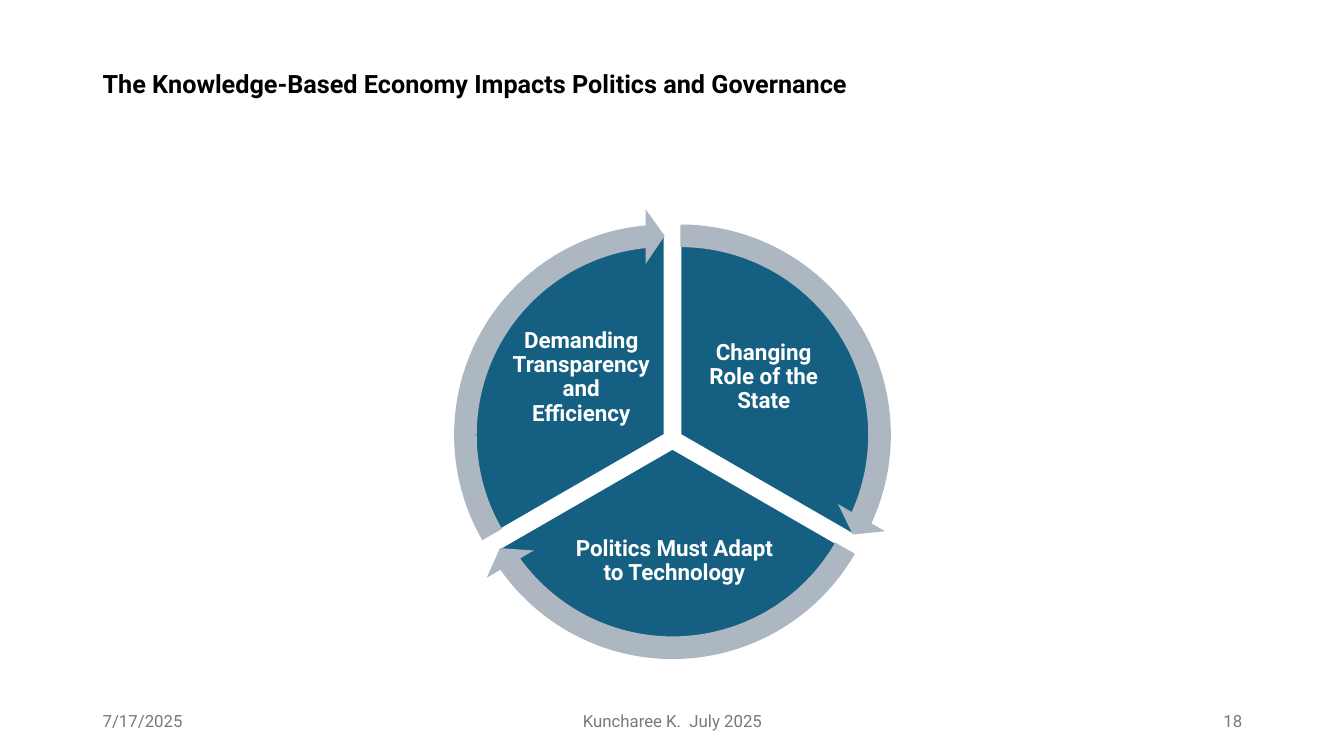
from math import cos, radians, sin

from pptx import Presentation
from pptx.dml.color import RGBColor
from pptx.enum.shapes import MSO_SHAPE
from pptx.enum.text import MSO_ANCHOR, PP_ALIGN
from pptx.util import Inches, Pt

FONT = "Roboto"
BLACK = RGBColor(0x00, 0x00, 0x00)
WHITE = RGBColor(0xFF, 0xFF, 0xFF)
BLUE = RGBColor(0x15, 0x60, 0x82)
ARROW_GREY = RGBColor(0xAC, 0xB7, 0xC1)
FOOTER_GREY = RGBColor(0x79, 0x79, 0x79)

# The wheel: three sectors pushed outwards from one centre
CENTER_X, CENTER_Y = 6.67, 4.36
PUSH = 0.09
SECTOR_SIZE, ARROW_SIZE = 4, 4.49
SWEEP = 120
HEAD_ANGLE = 5.46
ANGLE_UNIT = 0.6  # adjustment value of one degree

# Start angle, label, label frame
SECTORS = [
    (270, "Changing Role of the State", (6.86, 3.15, 1.43, 1.19)),
    (30, "Politics Must Adapt to Technology", (5.62, 5.04, 2.14, 1.05)),
    (150, "Demanding Transparency and Efficiency", (5.05, 3.15, 1.43, 1.19)),
]

TITLE = {"size": Pt(18), "bold": True, "color": BLACK}
LABEL = {"size": Pt(16), "bold": True, "color": WHITE}
FOOTER = {"size": Pt(12), "bold": False, "color": FOOTER_GREY}


def add_text(page, text, frame, style, align=PP_ALIGN.LEFT, spacing=1.0, inset=None):
    box = page.shapes.add_textbox(*map(Inches, frame))
    text_frame = box.text_frame
    text_frame.word_wrap = True
    text_frame.vertical_anchor = MSO_ANCHOR.MIDDLE
    if inset is not None:
        for side in ("left", "right", "top", "bottom"):
            setattr(text_frame, f"margin_{side}", Inches(inset))
    para = text_frame.paragraphs[0]
    para.alignment = align
    para.line_spacing = spacing
    span = para.add_run()
    span.text = text
    span.font.name = FONT
    for name, value in style.items():
        if name == "color":
            span.font.color.rgb = value
        else:
            setattr(span.font, name, value)


def add_wheel_part(page, kind, start, size, color, adjustments):
    """Place a round shape, pushed out along the middle of its sector."""
    middle = radians(start + SWEEP / 2)
    left = CENTER_X + PUSH * cos(middle) - size / 2
    top = CENTER_Y + PUSH * sin(middle) - size / 2
    shape = page.shapes.add_shape(
        kind, Inches(left), Inches(top), Inches(size), Inches(size))
    for index, value in enumerate(adjustments):
        shape.adjustments[index] = value
    shape.shadow.inherit = False
    shape.fill.solid()
    shape.fill.fore_color.rgb = color
    shape.line.fill.background()
    return shape


def add_sector(page, start):
    end = (start + SWEEP) % 360
    sector = add_wheel_part(page, MSO_SHAPE.PIE, start, SECTOR_SIZE, BLUE,
                            (start * ANGLE_UNIT, end * ANGLE_UNIT))
    sector.line.color.rgb = WHITE
    sector.line.width = Pt(1.5)


def add_arrow(page, start):
    tip = (start + SWEEP) % 360 - HEAD_ANGLE
    add_wheel_part(page, MSO_SHAPE.CIRCULAR_ARROW, start, ARROW_SIZE, ARROW_GREY,
                   (0.05, 3.28, tip * ANGLE_UNIT, start * ANGLE_UNIT, 0.06))


def main():
    deck = Presentation()
    deck.slide_width, deck.slide_height = Inches(13.33), Inches(7.5)
    page = deck.slides.add_slide(deck.slide_layouts[6])

    # Title
    add_text(page, "The Knowledge-Based Economy Impacts Politics and Governance",
             (0.92, 0.4, 11.5, 0.89), TITLE, spacing=0.9)

    # Sectors with labels, then the arrows in front
    for start, label, frame in SECTORS:
        add_sector(page, start)
        add_text(page, label, frame, LABEL, PP_ALIGN.CENTER, 0.9, inset=0.02)
    for start, _, _ in SECTORS:
        add_arrow(page, start)

    # Footer
    for text, left, width, align in (
        ("7/17/2025", 0.92, 3, PP_ALIGN.LEFT),
        ("Kuncharee K.  July 2025", 4.42, 4.5, PP_ALIGN.CENTER),
        ("18", 9.42, 3, PP_ALIGN.RIGHT),
    ):
        add_text(page, text, (left, 6.95, width, 0.4), FOOTER, align)

    deck.save("out.pptx")


if __name__ == "__main__":
    main()
